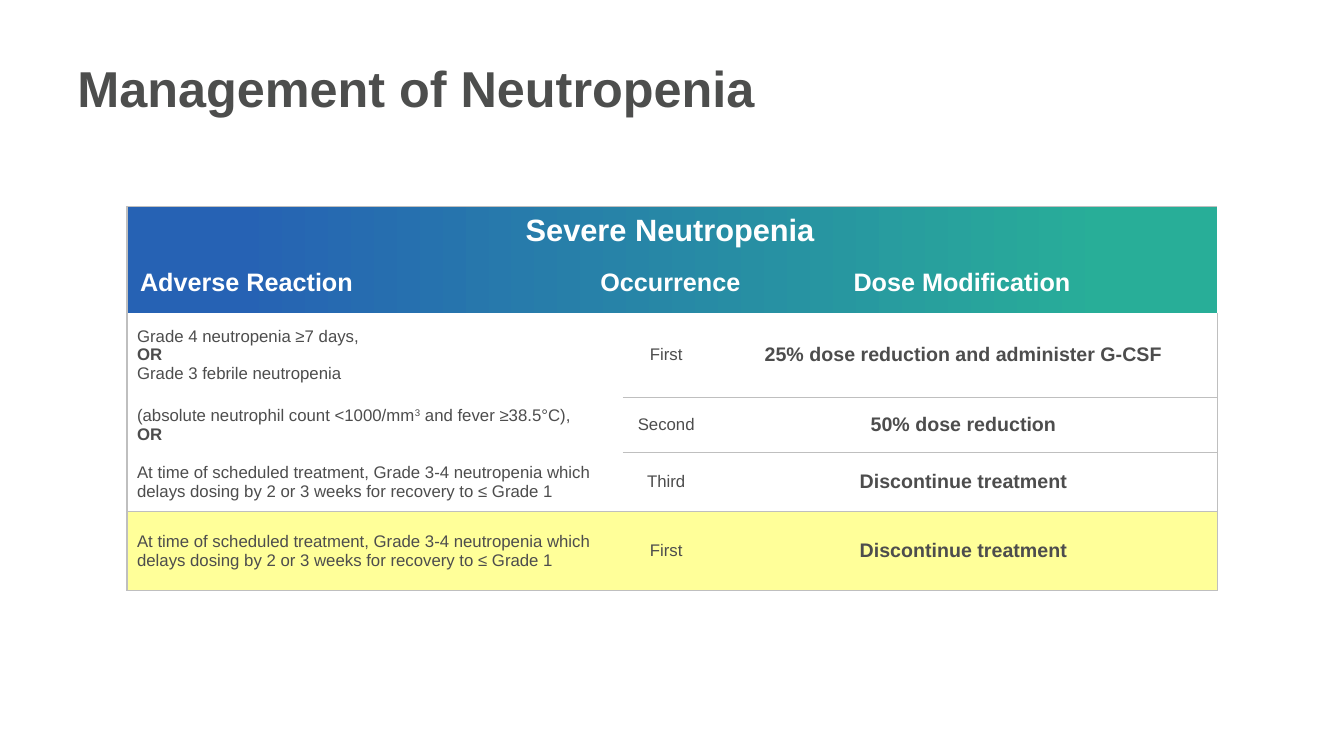
from dataclasses import dataclass

import pptx
import pptx.dml.color
import pptx.enum.text
import pptx.oxml
import pptx.oxml.ns
import pptx.util

Cm = pptx.util.Cm
Pt = pptx.util.Pt
Anchor = pptx.enum.text.MSO_ANCHOR
Align = pptx.enum.text.PP_ALIGN
RGB = pptx.dml.color.RGBColor.from_string


@dataclass(frozen=True)
class Theme:
    font: str = "Arial"
    title: str = "4D4E4D"
    body: str = "4D4D4D"
    white: str = "FFFFFF"
    highlight: str = "FFFF99"
    border: str = "BFBFBF"
    gradient: tuple = (("2662B4", 0.1), ("28AE98", 0.9))
    title_size: int = 36
    banner_size: int = 22
    heading_size: int = 18
    dose_size: int = 14
    body_size: int = 12


THEME = Theme()
NO_GRID_STYLE = "{2D5ABB26-0587-4C30-8999-92F81FD0307C}"
COLUMN_WIDTHS = (12.5, 2.18, 12.8)
ROW_HEIGHTS = (2.67, 2.13, 1.4, 1.47, 2.01)
DELAYED = ("At time of scheduled treatment, Grade 3-4 neutropenia which "
           "delays dosing by 2 or 3 weeks for recovery to ≤ Grade 1")
ROWS = (
    (("Grade 4 neutropenia ≥7 days,", "OR", "Grade 3 febrile neutropenia"),
     "First", "25% dose reduction and administer G-CSF"),
    (("(absolute neutrophil count <1000/mm^3^ and fever ≥38.5°C),", "OR"),
     "Second", "50% dose reduction"),
    ((DELAYED,), "Third", "Discontinue treatment"),
    ((DELAYED,), "First", "Discontinue treatment"),
)
HEADINGS = (
    ("Adverse Reaction", 3.28, 6.58, 5.92),
    ("Occurrence", 14.88, 6.58, 4.06),
    ("Dose Modification", 21.26, 6.58, 6.05),
)


def style_paragraph(paragraph, size, color, bold=False, align=Align.LEFT):
    paragraph.alignment = align
    paragraph.font.name = THEME.font
    paragraph.font.size = Pt(size)
    paragraph.font.bold = bold
    paragraph.font.color.rgb = RGB(color)


def add_label(slide, text, left, top, width, height, size, color):
    shape = slide.shapes.add_textbox(Cm(left), Cm(top), Cm(width), Cm(height))
    paragraph = shape.text_frame.paragraphs[0]
    paragraph.add_run().text = text
    style_paragraph(paragraph, size, color, bold=True)
    return shape.text_frame


def add_heading(slide, text, left, top, width, height, size):
    frame = add_label(slide, text, left, top, width, height, size, THEME.white)
    frame.word_wrap = False
    frame.auto_size = pptx.enum.text.MSO_AUTO_SIZE.SHAPE_TO_FIT_TEXT


def add_runs(paragraph, text):
    for index, part in enumerate(text.split("^")):
        run = paragraph.add_run()
        run.text = part
        if index % 2:
            run._r.get_or_add_rPr().set("baseline", "30000")


def write_cell(cell, lines, size, bold=False, align=Align.LEFT):
    cell.vertical_anchor = Anchor.MIDDLE
    cell.margin_top = cell.margin_bottom = 0
    frame = cell.text_frame
    for index, line in enumerate(lines):
        paragraph = frame.add_paragraph() if index else frame.paragraphs[0]
        add_runs(paragraph, line)
        style_paragraph(paragraph, size, THEME.body, bold or line == "OR", align)


def set_borders(cell, sides):
    properties = cell._tc.get_or_add_tcPr()
    for side in sides:
        properties.append(pptx.oxml.parse_xml(
            f'<a:ln{side} {pptx.oxml.ns.nsdecls("a")} w="{int(Pt(1))}"><a:solidFill>'
            f'<a:srgbClr val="{THEME.border}"/></a:solidFill></a:ln{side}>'))


def border_sides(row, column):
    last_row, last_column = len(ROW_HEIGHTS) - 1, len(COLUMN_WIDTHS) - 1
    bottom = row >= last_row - 1 or (row > 0 and column > 0)
    rules = (("L", column == 0), ("R", column == last_column),
             ("T", row == 0), ("B", bottom))
    return [side for side, shown in rules if shown]


def fill_banner(cell):
    cell.fill.gradient()
    cell.fill.gradient_angle = 0
    for stop, (color, position) in zip(cell.fill.gradient_stops, THEME.gradient):
        stop.color.rgb = RGB(color)
        stop.position = position


def add_dose_table(slide):
    shape = slide.shapes.add_table(
        len(ROW_HEIGHTS), len(COLUMN_WIDTHS), Cm(3.2), Cm(5.21),
        Cm(sum(COLUMN_WIDTHS)), Cm(sum(ROW_HEIGHTS)))
    table = shape.table
    table.first_row = table.horz_banding = False
    table._tbl.tblPr.find(pptx.oxml.ns.qn("a:tableStyleId")).text = NO_GRID_STYLE
    for column, width in zip(table.columns, COLUMN_WIDTHS):
        column.width = Cm(width)
    for row, height in zip(table.rows, ROW_HEIGHTS):
        row.height = Cm(height)
    for row in range(len(ROW_HEIGHTS)):
        for column in range(len(COLUMN_WIDTHS)):
            set_borders(table.cell(row, column), border_sides(row, column))

    table.cell(0, 0).merge(table.cell(0, len(COLUMN_WIDTHS) - 1))
    fill_banner(table.cell(0, 0))
    for row, (reaction, occurrence, dose) in enumerate(ROWS, start=1):
        cells = [table.cell(row, column) for column in range(len(COLUMN_WIDTHS))]
        write_cell(cells[0], reaction, THEME.body_size)
        write_cell(cells[1], [occurrence], THEME.body_size, align=Align.CENTER)
        write_cell(cells[2], [dose], THEME.dose_size, True, Align.CENTER)
        for cell in cells:
            cell.fill.solid()
            cell.fill.fore_color.rgb = RGB(
                THEME.highlight if row == len(ROWS) else THEME.white)


def main():
    presentation = pptx.Presentation()
    presentation.slide_width = Cm(33.87)
    presentation.slide_height = Cm(19.05)
    slide = presentation.slides.add_slide(presentation.slide_layouts[6])

    title = add_label(slide, "Management of Neutropenia", 1.7, 0.56, 29.85, 3.3,
                      THEME.title_size, THEME.title)
    title.word_wrap = True
    title.vertical_anchor = Anchor.MIDDLE

    add_dose_table(slide)
    for text, left, top, width in HEADINGS:
        add_heading(slide, text, left, top, width, 1.02, THEME.heading_size)
    add_heading(slide, "Severe Neutropenia", 13, 5.18, 7.87, 1.19,
                THEME.banner_size)
    presentation.save("out.pptx")


if __name__ == "__main__":
    main()
